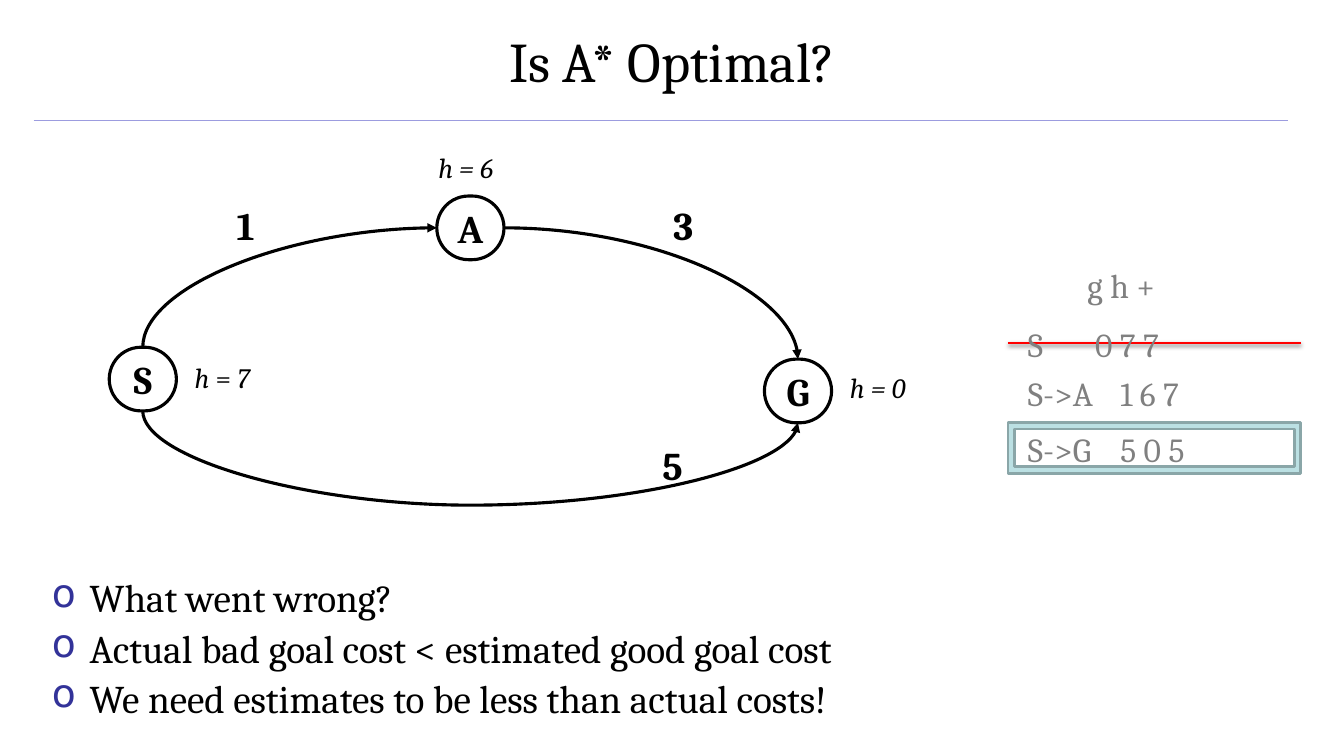
from lxml import etree
from pptx import Presentation
from pptx.dml.color import RGBColor
from pptx.enum.shapes import MSO_CONNECTOR, MSO_SHAPE
from pptx.enum.text import MSO_ANCHOR, PP_ALIGN
from pptx.oxml.ns import qn
from pptx.util import Pt

STRAIGHT, CURVE = MSO_CONNECTOR.STRAIGHT, MSO_CONNECTOR.CURVE
ROUNDED, FRAME = MSO_SHAPE.ROUNDED_RECTANGLE, MSO_SHAPE.FRAME
LEFT, CENTER = PP_ALIGN.LEFT, PP_ALIGN.CENTER
TOP, MIDDLE = MSO_ANCHOR.TOP, MSO_ANCHOR.MIDDLE
FONT = "Cambria"
COLORS = {"ink": "000000", "rule": "9C9CDF", "bullet": "333399", "muted": "808080",
          "strike": "FF0000", "frame": "BBE0E3", "frame_edge": "8AA6A8"}


def color(name):
    return RGBColor.from_string(COLORS[name])


def child(parent, tag, **attributes):
    return etree.SubElement(parent, qn(tag), {k: str(v) for k, v in attributes.items()})


def format_text(frame, paragraphs, size=28, ink="ink", bold=False, italic=False,
                align=LEFT, anchor=TOP, wrap=True, bullet=None, tab=None,
                indent=0, line_spacing=None, gap=0):
    """Each paragraph is a string, or a tuple of runs whose slant alternates."""
    frame.word_wrap = wrap
    frame.vertical_anchor = anchor
    for i, runs in enumerate(paragraphs):
        paragraph = frame.paragraphs[0] if i == 0 else frame.add_paragraph()
        properties = paragraph._p.get_or_add_pPr()
        if indent:
            properties.set("marL", str(Pt(indent)))
        if bullet:
            properties.set("indent", str(-Pt(indent)))
            child(child(properties, "a:buClr"), "a:srgbClr", val=COLORS["bullet"])
            child(properties, "a:buChar", char=bullet)
        if tab:
            child(child(properties, "a:tabLst"), "a:tab", pos=Pt(tab), algn="l")
        paragraph.alignment = align
        if line_spacing:
            paragraph.line_spacing = line_spacing
        if i and gap:
            paragraph.space_before = Pt(gap)
        for j, text in enumerate((runs,) if isinstance(runs, str) else runs):
            run = paragraph.add_run()
            run.text = text
            run.font.name, run.font.size = FONT, Pt(size)
            run.font.bold, run.font.italic = bold, italic and j % 2 == 0
            run.font.color.rgb = color(ink)


def add_text(slide, box, *paragraphs, **style):
    textbox = slide.shapes.add_textbox(*map(Pt, box))
    format_text(textbox.text_frame, paragraphs, **style)


def add_line(slide, start, end, ink, width, kind=STRAIGHT):
    line = slide.shapes.add_connector(kind, *map(Pt, (*start, *end)))
    line.line.color.rgb = color(ink)
    line.line.width = Pt(width)
    effects = child(line._element.spPr, "a:effectLst")
    return line, effects


def add_curve(slide, start, end, preset, turn=0, flip_h=False, flip_v=False, bend=None):
    """Curved arrow; a quarter turn swaps the sides of its frame about the centre."""
    cx, cy = (start[0] + end[0]) / 2, (start[1] + end[1]) / 2
    dx, dy = abs(end[0] - start[0]) / 2, abs(end[1] - start[1]) / 2
    if turn % 180:
        dx, dy = dy, dx
    dx, dy = -dx if flip_h else dx, -dy if flip_v else dy
    curve, _ = add_line(slide, (cx - dx, cy - dy), (cx + dx, cy + dy), "ink", 2.25, CURVE)
    properties = curve._element.spPr
    properties.find(qn("a:xfrm")).set("rot", str(turn * 60000))
    geometry = properties.find(qn("a:prstGeom"))
    geometry.set("prst", preset)
    if bend:
        guides = geometry.find(qn("a:avLst"))
        if guides is None:
            guides = child(geometry, "a:avLst")
        child(guides, "a:gd", name="adj1", fmla=f"val {round(bend * 100000)}")
    child(properties.find(qn("a:ln")), "a:tailEnd", type="triangle")


def draw_heading(slide, left, top, width, height):
    add_line(slide, (left + 24, top + 88), (left + width - 40, top + 88), "rule", 1)
    add_text(slide, (left, top, width, height), "Is A* Optimal?",
             size=40, align=CENTER, anchor=MIDDLE)


def draw_graph(slide, left, top, width, height):
    node_w, node_h = 48, 45.5
    nodes = {"S": (left, top + 144), "A": (left + 234, top + 36),
             "G": (left + 468, top + 152.5)}

    # States
    for state, (x, y) in nodes.items():
        node = slide.shapes.add_shape(ROUNDED, *map(Pt, (x, y, node_w, node_h)))
        node.adjustments[0] = 0.5
        node.shadow.inherit = False
        node.fill.background()
        node.line.color.rgb = color("ink")
        node.line.width = Pt(2.25)
        format_text(node.text_frame, [state], bold=True, align=CENTER,
                    anchor=MIDDLE, wrap=False)

    # Arrows
    def port(state, across, down):
        x, y = nodes[state]
        return x + across * node_w, y + down * node_h

    add_curve(slide, port("S", 0.5, 1), port("G", 0.5, 1), "curvedConnector3",
              turn=270, flip_h=True, bend=7.92)
    add_curve(slide, port("S", 0.5, 0), port("A", 0, 0.5), "curvedConnector2",
              turn=90, flip_h=True, flip_v=True)
    add_curve(slide, port("A", 1, 0.5), port("G", 0.5, 0), "curvedConnector2")

    # Step costs
    for cost, x, y in (("1", 84, 36), ("3", 396, 36), ("5", 388, 208)):
        add_text(slide, (left + x, top + y, 36, 41), cost, bold=True)

    # Heuristic values
    for label, x, y in (("h = 6", 228, 0), ("h = 0", 522, 157),
                        (("h", " = ", "7"), 54, 150)):
        add_text(slide, (left + x, top + y, 72, 32), label, size=20, italic=True)


def draw_fringe(slide, left, top, width, height):
    text_left, row_h = left + 7.2, 36
    add_text(slide, (text_left, top, width, row_h), "g h +",
             size=24, ink="muted", indent=42.5)

    # Expanded state, struck through
    _, effects = add_line(slide, (left, top + 59), (left + width, top + 59), "strike", 2)
    shadow = child(effects, "a:outerShdw", blurRad=Pt(3.1), dist=Pt(1.6),
                   dir=90 * 60000, rotWithShape=0)
    child(child(shadow, "a:srgbClr", val=COLORS["ink"]), "a:alpha", val=38000)

    for entry, y, tab in (("S\t0 7 7", 41.5, 48), ("S->A\t1 6 7", 77, 66),
                          ("S->G\t5 0 5", 116.5, 66)):
        add_text(slide, (text_left, top + y, width, row_h), entry,
                 size=24, ink="muted", tab=tab)

    # Chosen path
    frame = slide.shapes.add_shape(FRAME, *map(Pt, (left, top + 116, width, row_h)))
    frame.shadow.inherit = False
    frame.fill.solid()
    frame.fill.fore_color.rgb = color("frame")
    frame.line.color.rgb = color("frame_edge")
    frame.line.width = Pt(2)


def draw_conclusions(slide, *box):
    add_text(slide, box, "What went wrong?",
             "Actual bad goal cost < estimated good goal cost",
             "We need estimates to be less than actual costs!",
             bullet="o", indent=27, line_spacing=0.9, gap=5.6)


def main():
    deck = Presentation()
    deck.slide_width, deck.slide_height = Pt(960), Pt(540)
    slide = deck.slides.add_slide(deck.slide_layouts[6])
    draw_heading(slide, 0, -2, 960, 90)
    draw_graph(slide, 78, 104, 594, 260)
    draw_fringe(slide, 720, 186, 209, 152)
    draw_conclusions(slide, 30, 410, 754, 114)
    deck.save("out.pptx")


if __name__ == "__main__":
    main()
